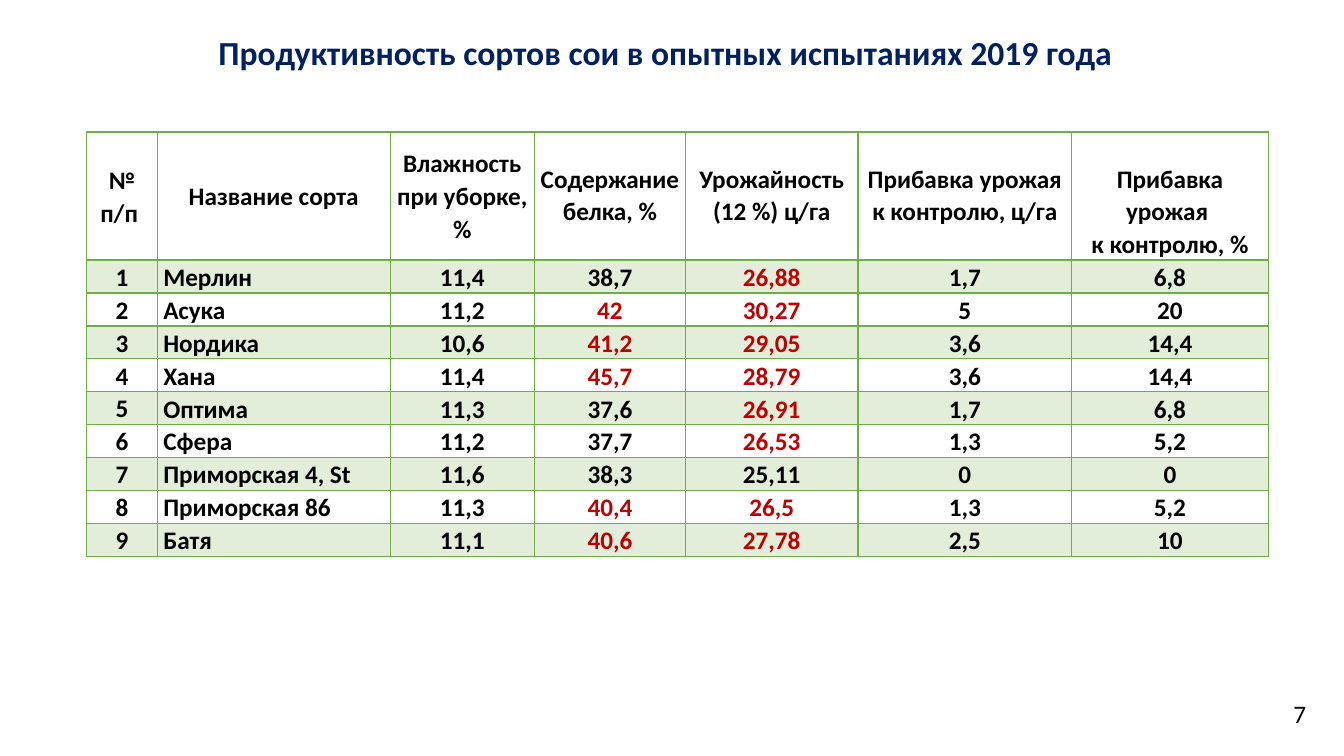
from lxml import etree
from pptx import Presentation
from pptx import util as u
from pptx.dml import color as dml
from pptx.enum import text
from pptx.oxml import ns

WIDTH, HEIGHT = 13.33, 7.5
GREEN, RED, BLACK, NAVY = "70AD47", "C00000", "000000", "002060"
COLUMN_WIDTHS = [0.7, 2.31, 1.43, 1.5, 1.71, 2.12, 1.95]
HEADER_SHARE = 1.26 / 4.16
HEADERS = [
    "№ п/п ", "Название сорта", "Влажность при уборке, %", "Содержание белка, %",
    "Урожайность (12 %) ц/га", "Прибавка урожая к контролю, ц/га",
    "Прибавка урожая \nк контролю, %",
]
VARIETIES = [
    ("Мерлин", "11,4", "38,7", "26,88", "1,7", "6,8"),
    ("Асука", "11,2", "42", "30,27", "5", "20"),
    ("Нордика", "10,6", "41,2", "29,05", "3,6", "14,4"),
    ("Хана", "11,4", "45,7", "28,79", "3,6", "14,4"),
    ("Оптима", "11,3", "37,6", "26,91", "1,7", "6,8"),
    ("Сфера", "11,2", "37,7", "26,53", "1,3", "5,2"),
    ("Приморская 4, St", "11,6", "38,3", "25,11", "0", "0"),
    ("Приморская 86", "11,3", "40,4", "26,5", "1,3", "5,2"),
    ("Батя", "11,1", "40,6", "27,78", "2,5", "10"),
]
NAME, PROTEIN, YIELD = 1, 3, 4
HIGHLIGHT_ABOVE = {PROTEIN: 40, YIELD: 25.11}
TOP, MIDDLE, BOTTOM = (text.MSO_ANCHOR.TOP, text.MSO_ANCHOR.MIDDLE,
                       text.MSO_ANCHOR.BOTTOM)
LEFT, CENTER, JUSTIFY = (text.PP_ALIGN.LEFT, text.PP_ALIGN.CENTER,
                         text.PP_ALIGN.JUSTIFY)


def rgb(value):
    return dml.RGBColor.from_string(value)


def share_box(left, top, width, height):
    return [u.Inches(round(share * side, 2)) for share, side in
            zip((left, top, width, height), (WIDTH, HEIGHT) * 2)]


def write_text(frame, content, size=18, color=BLACK, bold=False,
               align=CENTER, spacing=1.0):
    frame.word_wrap = True
    for index, line in enumerate(content.split("\n")):
        paragraph = frame.add_paragraph() if index else frame.paragraphs[0]
        paragraph.alignment = align
        paragraph.line_spacing = spacing
        run = paragraph.add_run()
        run.text = line
        run.font.name = "Calibri"
        run.font.size = u.Pt(size)
        run.font.bold = bold
        run.font.color.rgb = rgb(color)


def set_fill(cell, banded):
    if not banded:
        cell.fill.background()
        return
    cell.fill.solid()
    cell.fill.fore_color.rgb = rgb(GREEN)
    color = cell._tc.tcPr.find(".//" + ns.qn("a:srgbClr"))
    etree.SubElement(color, ns.qn("a:alpha"), val="20000")


def set_borders(cell, widths):
    properties = cell._tc.get_or_add_tcPr()
    for index, (side, width) in enumerate(widths.items()):
        line = etree.Element(ns.qn(f"a:ln{side}"), w=str(u.Pt(width)))
        fill = etree.SubElement(line, ns.qn("a:solidFill"))
        etree.SubElement(fill, ns.qn("a:srgbClr"), val=GREEN)
        properties.insert(index, line)


def format_cell(cell, content, row, column):
    header = row == 0
    cell.margin_left = cell.margin_right = u.Inches(0.06)
    cell.margin_top = cell.margin_bottom = 0
    if header:
        cell.vertical_anchor = MIDDLE if column < PROTEIN else TOP
        if column >= PROTEIN:
            cell.margin_top = u.Inches(0.3)
    else:
        cell.vertical_anchor = TOP if column == 0 else MIDDLE if column < PROTEIN else BOTTOM
    highlighted = (not header and column in HIGHLIGHT_ABOVE and
                   float(content.replace(",", ".")) > HIGHLIGHT_ABOVE[column])
    write_text(cell.text_frame, content, bold=True,
               color=RED if highlighted else BLACK,
               align=JUSTIFY if column == NAME and not header else CENTER,
               spacing=1.06 if header and column >= PROTEIN else 1.07)
    set_fill(cell, row % 2 == 1)
    set_borders(cell, {"L": 1, "R": 1, "T": 2 if row == 1 else 1, "B": 2 if header else 1})


def add_title(slide, box):
    title = slide.shapes.title
    title.left, title.top, title.width, title.height = box
    title.text_frame.auto_size = text.MSO_AUTO_SIZE.NONE
    title.text_frame.vertical_anchor = MIDDLE
    write_text(title.text_frame, "Продуктивность сортов сои в опытных испытаниях 2019 года",
               size=24, color=NAVY, bold=True)


def add_variety_table(slide, box):
    rows = [HEADERS] + [(str(number), *variety)
                        for number, variety in enumerate(VARIETIES, 1)]
    table = slide.shapes.add_table(len(rows), len(HEADERS), *box).table
    table.first_row = table.horz_banding = False
    width, height = box[2:]
    for column, share in zip(table.columns, COLUMN_WIDTHS):
        column.width = int(width * share / sum(COLUMN_WIDTHS))
    header_height = int(height * HEADER_SHARE)
    for index, values in enumerate(rows):
        table.rows[index].height = (
            (height - header_height) // len(VARIETIES) if index else header_height)
        for column, content in enumerate(values):
            format_cell(table.cell(index, column), content, index, column)


def add_page_number(slide, box):
    number = slide.shapes.add_textbox(*box)
    write_text(number.text_frame, "7", align=LEFT)


def main():
    presentation = Presentation()
    presentation.slide_width = u.Inches(WIDTH)
    presentation.slide_height = u.Inches(HEIGHT)
    slide = presentation.slides.add_slide(presentation.slide_layouts[5])
    add_title(slide, share_box(0.035, 0.036, 0.92, 0.067))
    add_variety_table(slide, share_box(0.0645, 0.175, 0.879, 0.555))
    add_page_number(slide, share_box(0.955, 0.917, 0.025, 0.053))
    presentation.save("out.pptx")


if __name__ == "__main__":
    main()
